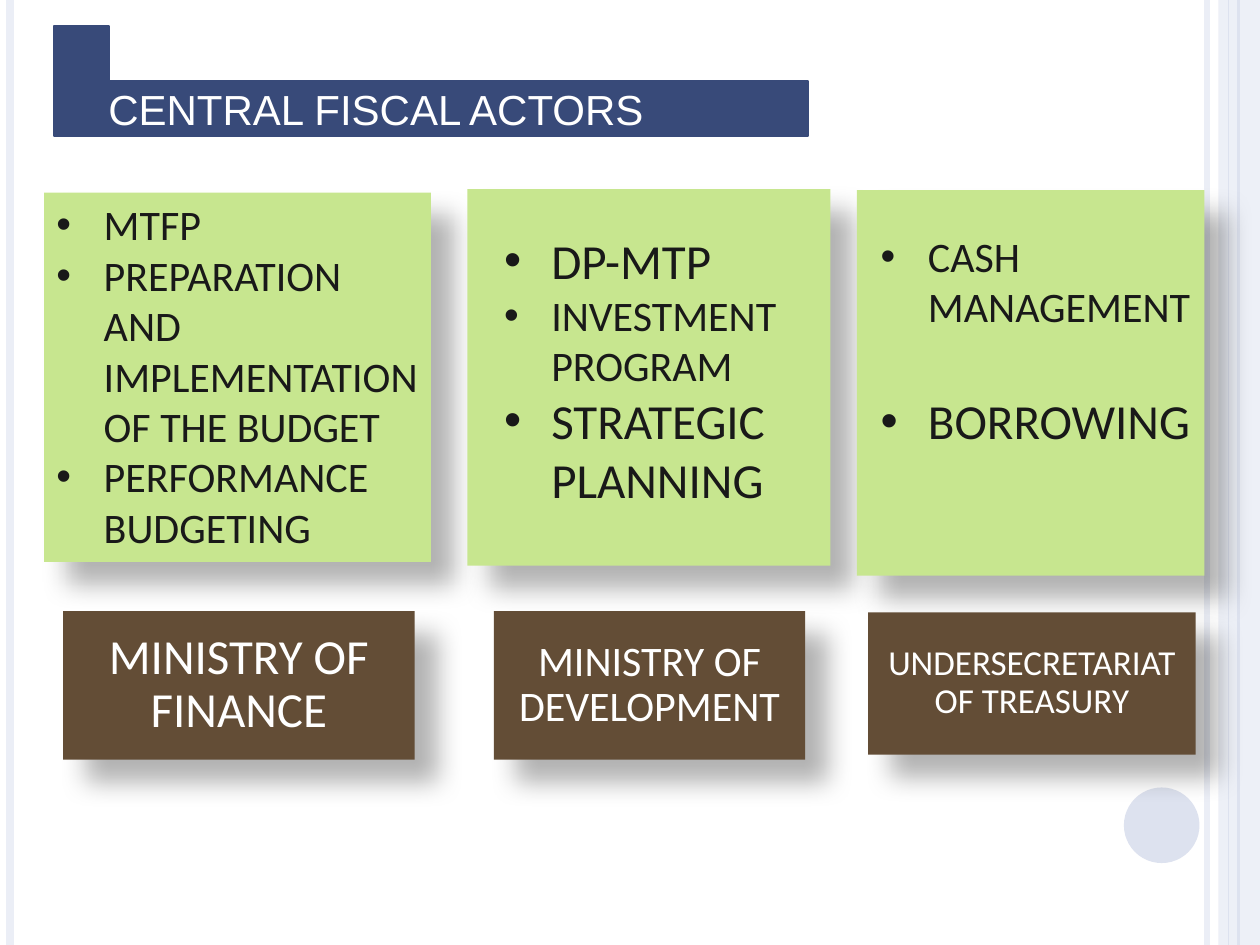
"""Build the slide on central fiscal actors and their responsibilities."""
from lxml import etree
from pptx import Presentation
from pptx.dml.color import RGBColor
from pptx.enum.shapes import MSO_CONNECTOR, MSO_SHAPE
from pptx.enum.text import MSO_ANCHOR, PP_ALIGN
from pptx.oxml.ns import qn
from pptx.util import Inches, Pt

LINE = MSO_CONNECTOR.STRAIGHT
RECT, OVAL, CORNER = MSO_SHAPE.RECTANGLE, MSO_SHAPE.OVAL, MSO_SHAPE.CORNER
TOP, MIDDLE = MSO_ANCHOR.TOP, MSO_ANCHOR.MIDDLE
LEFT, CENTER = PP_ALIGN.LEFT, PP_ALIGN.CENTER

PALE = RGBColor(0xEB, 0xEE, 0xF6)
MIST = RGBColor(0xDD, 0xE2, 0xEF)
NAVY = RGBColor(0x38, 0x4A, 0x79)
GREEN = RGBColor(0xC7, 0xE6, 0x8F)
BROWN = RGBColor(0x63, 0x4D, 0x36)
INK = RGBColor(0x19, 0x19, 0x19)
WHITE = RGBColor(0xFF, 0xFF, 0xFF)

prs = Presentation()
prs.slide_width, prs.slide_height = Inches(10), Inches(7.5)
COL, ROW = prs.slide_width // 100, prs.slide_height // 75
s = prs.slides.add_slide(prs.slide_layouts[5])


def add_block(kind, x, y, w, h, color):
    sp = s.shapes.add_shape(kind, int(x * COL), int(y * ROW), int(w * COL), int(h * ROW))
    sp.shadow.inherit = False
    sp.fill.solid()
    sp.fill.fore_color.rgb = color
    sp.line.fill.background()
    return sp


def add_shadow(sp):
    effects = sp._element.spPr.find(qn("a:effectLst"))
    shadow = etree.SubElement(effects, qn("a:outerShdw"), blurRad=str(Pt(15)),
                              dist=str(Pt(18)), dir="2700000", algn="tl", rotWithShape="0")
    color = etree.SubElement(shadow, qn("a:srgbClr"), val="000000")
    etree.SubElement(color, qn("a:alpha"), val="30000")


band = add_block(RECT, 96.7, 0, 3.3, 75, PALE)
fill_color = band._element.spPr.find(qn("a:solidFill"))[0]
etree.SubElement(fill_color, qn("a:alpha"), val="87000")
for x, width, color in [(95.8, 3, PALE), (0.8, 4.5, PALE), (98.3, 1.5, MIST), (97.5, 0.75, MIST)]:
    stripe = s.shapes.add_connector(LINE, int(x * COL), 0, int(x * COL), 75 * ROW)
    stripe.line.color.rgb = color
    stripe.line.width = Pt(width)
    etree.SubElement(stripe._element.spPr, qn("a:effectLst"))
add_block(OVAL, 89.2, 62.5, 6, 6, MIST)

cards = [
    (3.5, 15.3, 30.7, 29.3, (1, 0.5, 1),
     [("MTFP", 24, 0), ("PREPARATION AND IMPLEMENTATION OF THE BUDGET", 24, 0),
      ("PERFORMANCE BUDGETING", 24, 0)]),
    (37.1, 15, 28.8, 29.9, (2.9, 3.3, 2.7),
     [("DP-MTP", 28, 0), ("INVESTMENT PROGRAM", 24, 0), ("STRATEGIC PLANNING", 28, 0)]),
    (68, 15.1, 27.6, 30.6, (1.9, 3.2, 0.9),
     [("CASH MANAGEMENT", 24, 0), ("BORROWING", 28, 34)]),
]
for x, y, w, h, (left, top, right), duties in cards:
    card = add_block(RECT, x, y, w, h, GREEN)
    add_shadow(card)
    tf = card.text_frame
    tf.word_wrap = True
    tf.vertical_anchor = TOP
    tf.margin_left, tf.margin_top = int(left * COL), int(top * ROW)
    tf.margin_right, tf.margin_bottom = int(right * COL), ROW // 2
    for i, (text, size, gap) in enumerate(duties):
        p = tf.paragraphs[0] if i == 0 else tf.add_paragraph()
        pPr = p._p.get_or_add_pPr()
        pPr.set("marL", str(int(3.75 * COL)))
        pPr.set("indent", str(int(-3.75 * COL)))
        etree.SubElement(pPr, qn("a:buFont"), typeface="Arial")
        etree.SubElement(pPr, qn("a:buChar"), char="•")
        p.alignment = LEFT
        if gap:
            p.space_before = Pt(gap)
        r = p.add_run()
        r.text = text
        r.font.size, r.font.name = Pt(size), "Calibri"
        r.font.color.rgb = INK

ministries = [
    (5, 48.5, 27.9, 11.8, 1.2, 28, "MINISTRY OF FINANCE"),
    (39.2, 48.5, 24.7, 11.8, 1, 24, "MINISTRY OF DEVELOPMENT"),
    (68.9, 48.6, 26, 11.3, 0.8, 20, "UNDERSECRETARIAT OF TREASURY"),
]
for x, y, w, h, margin, size, text in ministries:
    label = add_block(RECT, x, y, w, h, BROWN)
    add_shadow(label)
    tf = label.text_frame
    tf.word_wrap = True
    tf.vertical_anchor = MIDDLE
    tf.margin_left = tf.margin_right = int(margin * COL)
    tf.margin_top = tf.margin_bottom = int(margin * ROW)
    p = tf.paragraphs[0]
    p.alignment = CENTER
    p.line_spacing = 0.9
    r = p.add_run()
    r.text = text
    r.font.size, r.font.name = Pt(size), "Calibri"
    r.font.color.rgb = WHITE

banner = add_block(CORNER, 4.3, 2.1, 59.8, 8.7, NAVY)
banner.line.color.rgb = NAVY
banner.line.width = Pt(1.25)

title = s.shapes.title
s.shapes._spTree.append(title._element)
title.left, title.top = int(8.6 * COL), int(6.45 * ROW)
title.width, title.height = int(55.5 * COL), int(4.35 * ROW)
tf = title.text_frame
tf.word_wrap = True
tf.vertical_anchor = MIDDLE
tf.margin_left = tf.margin_right = tf.margin_top = tf.margin_bottom = 0
p = tf.paragraphs[0]
p.alignment = LEFT
r = p.add_run()
r.text = "CENTRAL FISCAL ACTORS"
r.font.size, r.font.name = Pt(24), "Arial"
r.font.color.rgb = WHITE

prs.save("out.pptx")
